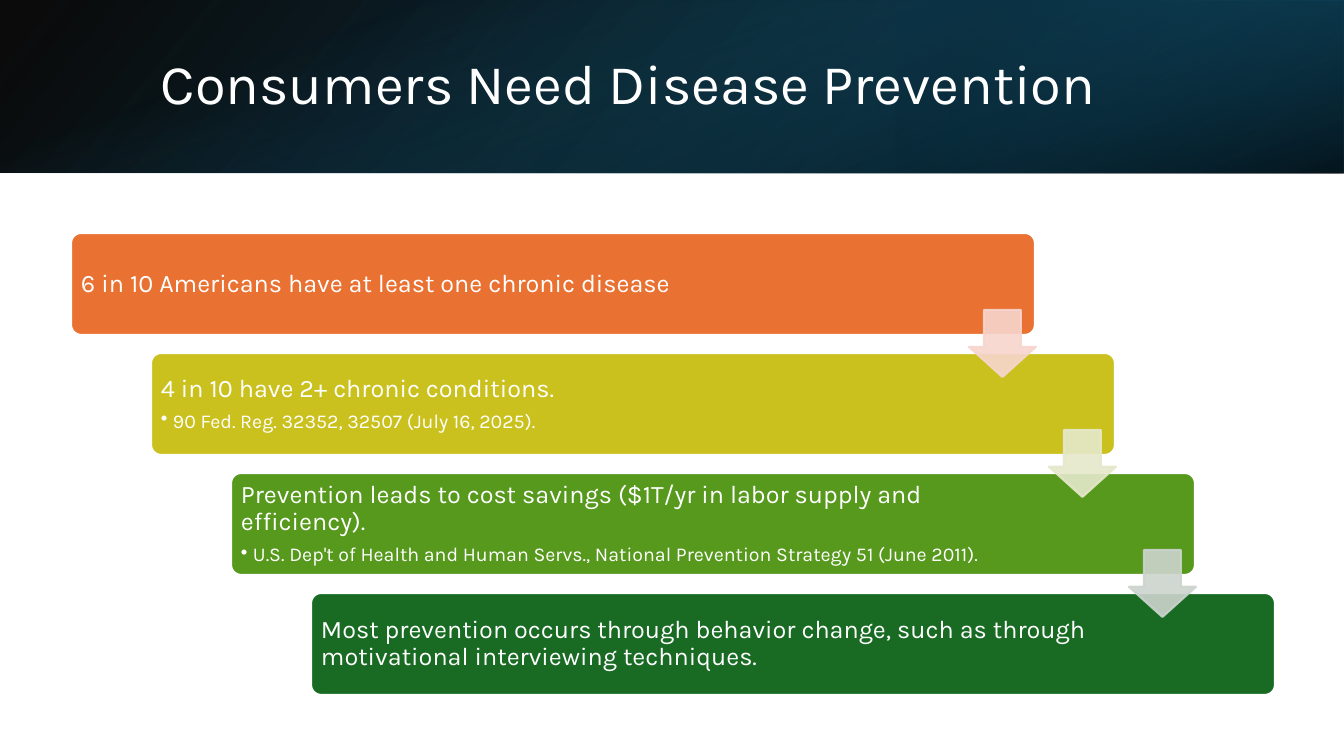
from dataclasses import dataclass

from lxml.etree import SubElement
from pptx import Presentation
from pptx.dml.color import RGBColor
from pptx.enum.shapes import MSO_SHAPE
from pptx.enum.text import MSO_ANCHOR, PP_ALIGN
from pptx.oxml.ns import qn
from pptx.util import Pt


@dataclass(frozen=True)
class Theme:
    font: str = "Karla"
    white: str = "FFFFFF"
    black: str = "000000"
    navy: str = "0B3041"
    deep_blue: str = "104862"
    blue: str = "156082"
    steps: tuple = ("E97132", "CBC11E", "56991D", "196B24")
    arrows: tuple = ("F7D5CE", "E5E8CA", "CCD4CD")
    title_size: int = 40
    claim_size: int = 18
    citation_size: int = 14
    outline: float = 1.5


THEME = Theme()
EMU_PER_PX = 914400 / 100.8
SLIDE_WIDTH, SLIDE_HEIGHT, HEADER_HEIGHT = 1344, 756, 173
STEP_LEFT, STEP_TOP, STEP_WIDTH, STEP_HEIGHT = 71, 233, 964, 102
ARROW_LEFT, ARROW_TOP, ARROW_SIZE = 969, 310, 67
SHIFT_RIGHT, SHIFT_DOWN = 80, 120

STEPS = (
    ("6 in 10 Americans have at least one chronic disease", None),
    ("4 in 10 have 2+ chronic conditions.",
     "90 Fed. Reg. 32352, 32507 (July 16, 2025)."),
    ("Prevention leads to cost savings ($1T/yr in labor supply and efficiency).",
     "U.S. Dep't of Health and Human Servs., National Prevention Strategy 51 (June 2011)."),
    ("Most prevention occurs through behavior change, such as through "
     "motivational interviewing techniques.", None),
)


def px(length):
    return round(length * EMU_PER_PX)


def add_block(slide, preset, box, adjustments=()):
    block = slide.shapes.add_shape(preset, *map(px, box))
    block.shadow.inherit = False
    for index, value in enumerate(adjustments):
        block.adjustments[index] = value
    return block


def paint(block, fill, outline):
    block.fill.solid()
    block.fill.fore_color.rgb = RGBColor.from_string(fill)
    block.line.color.rgb = RGBColor.from_string(outline)
    block.line.width = Pt(THEME.outline)


def set_opacity(block, percents):
    colours = block.element.spPr.iter(qn("a:srgbClr"))
    for colour, percent in zip(list(colours), percents):
        SubElement(colour, qn("a:alpha"), val=str(percent * 1000))


def add_header_layer(slide, box, stops, angle, rotation=0, flipped=False):
    layer = add_block(slide, MSO_SHAPE.RECTANGLE, box)
    layer.line.fill.background()
    layer.rotation = rotation
    if flipped:
        layer.element.spPr.find(qn("a:xfrm")).set("flipH", "1")
    layer.fill.gradient()
    layer.fill.gradient_angle = 360 - angle
    for stop, (position, colour, _) in zip(layer.fill.gradient_stops, stops):
        stop.position = position / 100
        stop.color.rgb = RGBColor.from_string(colour)
    set_opacity(layer, [opacity for _, _, opacity in stops])


def add_header(slide):
    add_header_layer(slide, (0, 0, SLIDE_WIDTH, HEADER_HEIGHT),
                     ((0, THEME.black, 96), (100, THEME.deep_blue, 100)),
                     140, flipped=True)
    add_header_layer(slide, (896, 0, 448, HEADER_HEIGHT),
                     ((19, THEME.navy, 68), (100, THEME.blue, 79)),
                     320, rotation=180, flipped=True)
    offset = (SLIDE_WIDTH - HEADER_HEIGHT) // 2
    add_header_layer(slide, (offset, -offset, HEADER_HEIGHT, SLIDE_WIDTH),
                     ((23, THEME.blue, 0), (99, THEME.black, 74)),
                     340, rotation=90)


def write(paragraph, text, size, space_after=0):
    paragraph.alignment = PP_ALIGN.LEFT
    paragraph.line_spacing = 0.9
    paragraph.space_after = Pt(space_after)
    run = paragraph.add_run()
    run.text = text
    run.font.name = THEME.font
    run.font.size = Pt(size)
    run.font.color.rgb = RGBColor.from_string(THEME.white)


def add_bullet(paragraph):
    properties = paragraph._p.get_or_add_pPr()
    properties.set("marL", str(px(12)))
    properties.set("indent", str(px(-12)))
    properties.set("lvl", "1")
    SubElement(properties, qn("a:buChar"), char="•")


def add_title(slide, text):
    frame = slide.shapes.add_textbox(*map(px, (151, 38, 1107, 97))).text_frame
    frame.word_wrap = True
    frame.vertical_anchor = MSO_ANCHOR.MIDDLE
    write(frame.paragraphs[0], text, THEME.title_size)


def add_step(slide, index, claim, citation):
    box = (STEP_LEFT + index * SHIFT_RIGHT, STEP_TOP + index * SHIFT_DOWN,
           STEP_WIDTH, STEP_HEIGHT)
    step = add_block(slide, MSO_SHAPE.ROUNDED_RECTANGLE, box, (0.1,))
    paint(step, THEME.steps[index], THEME.white)
    frame = step.text_frame
    frame.word_wrap = True
    frame.vertical_anchor = MSO_ANCHOR.MIDDLE
    frame.margin_left = frame.margin_top = frame.margin_bottom = px(7)
    frame.margin_right = px(153)
    write(frame.paragraphs[0], claim, THEME.claim_size, 6.3)
    if citation:
        source = frame.add_paragraph()
        add_bullet(source)
        write(source, citation, THEME.citation_size, 2.1)


def add_arrow(slide, index, colour):
    box = (ARROW_LEFT + index * SHIFT_RIGHT, ARROW_TOP + index * SHIFT_DOWN,
           ARROW_SIZE, ARROW_SIZE)
    arrow = add_block(slide, MSO_SHAPE.DOWN_ARROW, box, (0.55, 0.45))
    paint(arrow, colour, colour)
    set_opacity(arrow, (90, 90))


def main():
    presentation = Presentation()
    presentation.slide_width = px(SLIDE_WIDTH)
    presentation.slide_height = px(SLIDE_HEIGHT)
    slide = presentation.slides.add_slide(presentation.slide_layouts[6])
    add_header(slide)
    add_title(slide, "Consumers Need Disease Prevention")
    for index, (claim, citation) in enumerate(STEPS):
        add_step(slide, index, claim, citation)
    for index, colour in enumerate(THEME.arrows):
        add_arrow(slide, index, colour)
    presentation.save("out.pptx")


if __name__ == "__main__":
    main()
